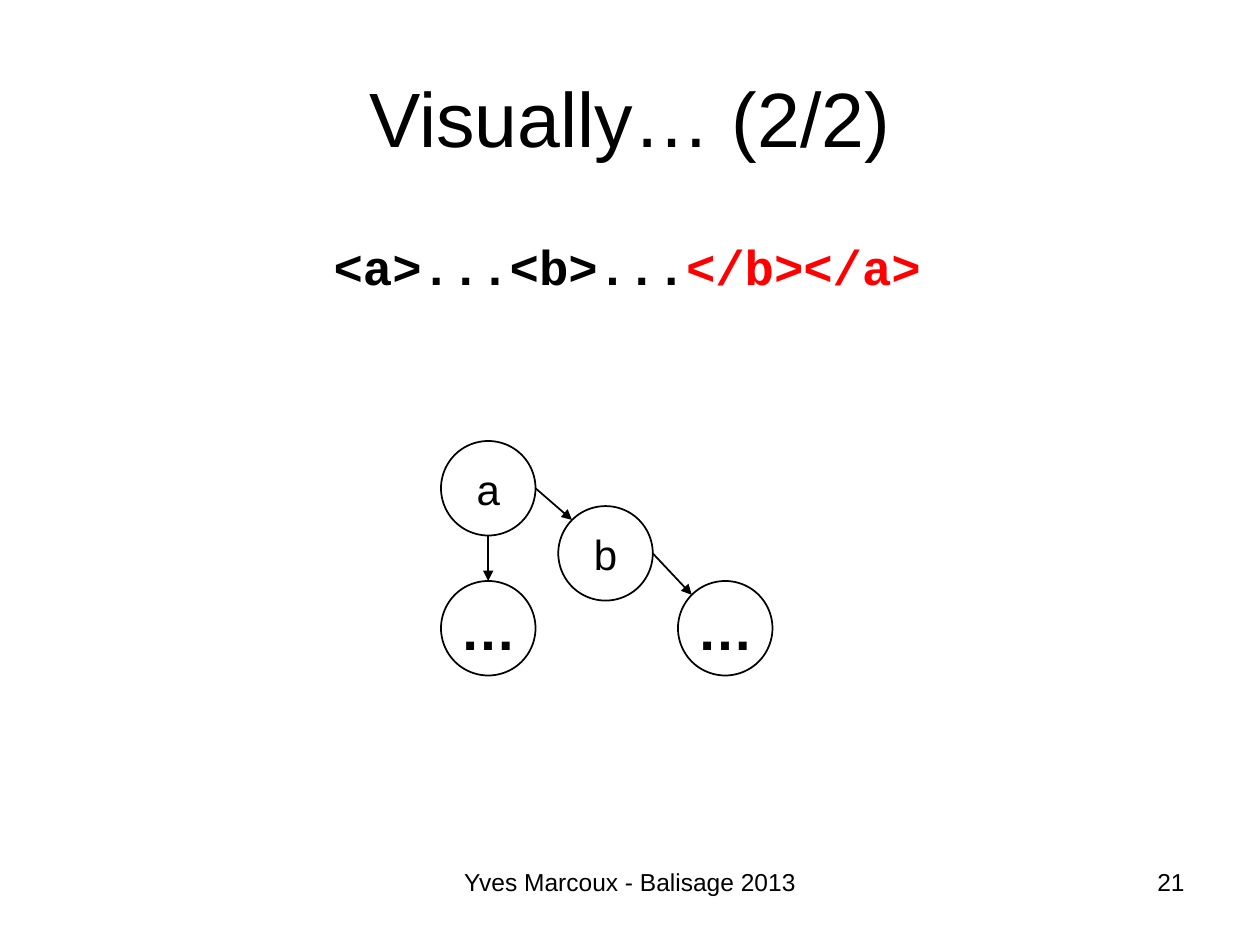
from dataclasses import dataclass
from math import sqrt

from lxml.etree import SubElement
from pptx import Presentation
from pptx.dml.color import RGBColor
from pptx.enum.shapes import MSO_CONNECTOR, MSO_SHAPE
from pptx.enum.text import MSO_ANCHOR, PP_ALIGN
from pptx.oxml.ns import qn
from pptx.util import Pt


@dataclass(frozen=True)
class Theme:
    ink: RGBColor = RGBColor(0, 0, 0)
    accent: RGBColor = RGBColor(255, 0, 0)
    sans: str = "Arial"
    mono: str = "Courier New"
    title: int = 44
    ellipsis: int = 32
    code: int = 28
    label: int = 24
    footer: int = 14
    line: int = 1


THEME = Theme()
NODE_SIZE = 54
# Node name: left and top within the tree, text
NODES = {
    "a": (0, 0, "a"),
    "b": (67, 37.2, "b"),
    "a text": (0, 80, "…"),
    "b text": (135.4, 80, "…"),
}
# Parent, side it leaves from, child, side it arrives at
EDGES = [
    ("a", "bottom", "a text", "top"),
    ("a", "right", "b", "top left"),
    ("b", "right", "b text", "top left"),
]
DIAGONAL = (1 - 1 / sqrt(2)) / 2
SIDES = {
    "top": (0.5, 0),
    "bottom": (0.5, 1),
    "right": (1, 0.5),
    "top left": (DIAGONAL, DIAGONAL),
}


def write(shape, runs, size, align=PP_ALIGN.CENTER, anchor=MSO_ANCHOR.TOP,
          wrap=True, font=THEME.sans, bold=False):
    """Fill a shape with one paragraph of (text, colour) runs."""
    frame = shape.text_frame
    frame.word_wrap = wrap
    frame.vertical_anchor = anchor
    paragraph = frame.paragraphs[0]
    paragraph.alignment = align
    for text, color in runs:
        run = paragraph.add_run()
        run.text = text
        for name, value in {"name": font, "size": Pt(size), "bold": bold}.items():
            setattr(run.font, name, value)
        run.font.color.rgb = color


def add_text(slide, box, runs, size, **options):
    shape = slide.shapes.add_textbox(*map(Pt, box))
    write(shape, runs, size, **options)


def add_title(slide, box):
    add_text(slide, box, [("Visually… (2/2)", THEME.ink)], THEME.title,
             anchor=MSO_ANCHOR.MIDDLE)


def add_code(slide, box):
    runs = [("<a>...<b>...", THEME.ink), ("</b></a>", THEME.accent)]
    add_text(slide, box, runs, THEME.code, align=PP_ALIGN.LEFT, wrap=False,
             font=THEME.mono, bold=True)


def add_node(slide, left, top, text):
    shape = slide.shapes.add_shape(
        MSO_SHAPE.OVAL, Pt(left), Pt(top), Pt(NODE_SIZE), Pt(NODE_SIZE))
    shape.shadow.inherit = False
    shape.fill.background()
    shape.line.color.rgb = THEME.ink
    shape.line.width = Pt(THEME.line)
    is_ellipsis = text == "…"
    write(shape, [(text, THEME.ink)],
          THEME.ellipsis if is_ellipsis else THEME.label,
          anchor=MSO_ANCHOR.MIDDLE, wrap=False, bold=is_ellipsis)


def add_arrow(slide, start, end):
    arrow = slide.shapes.add_connector(
        MSO_CONNECTOR.STRAIGHT, *map(Pt, (*start, *end)))
    arrow.line.color.rgb = THEME.ink
    arrow.line.width = Pt(THEME.line)
    SubElement(arrow.line._get_or_add_ln(), qn("a:tailEnd"), type="triangle")
    SubElement(arrow._element.spPr, qn("a:effectLst"))


def add_tree(slide, box):
    left, top = box[:2]

    def side_point(name, side):
        node_left, node_top, _ = NODES[name]
        across, down = SIDES[side]
        return (left + node_left + across * NODE_SIZE,
                top + node_top + down * NODE_SIZE)

    for node_left, node_top, text in NODES.values():
        add_node(slide, left + node_left, top + node_top, text)
    for parent, parent_side, child, child_side in EDGES:
        add_arrow(slide, side_point(parent, parent_side),
                  side_point(child, child_side))


def add_footer(slide, box):
    left, top, width, height = box
    number_width = 168
    add_text(slide, (left, top, 384, height),
             [("Yves Marcoux - Balisage 2013", THEME.ink)], THEME.footer)
    add_text(slide, (left + width - number_width, top, number_width, height),
             [("21", THEME.ink)], THEME.footer, align=PP_ALIGN.RIGHT)


def main():
    presentation = Presentation()
    presentation.slide_width = Pt(720)
    presentation.slide_height = Pt(540)
    slide = presentation.slides.add_slide(presentation.slide_layouts[6])

    add_title(slide, (36, 21.6, 648, 90))
    add_code(slide, (183.6, 131.8, 352.8, 41))
    add_tree(slide, (252, 252, 189.4, 134))
    add_footer(slide, (168, 492, 516, 37.5))

    presentation.save("out.pptx")


if __name__ == "__main__":
    main()
